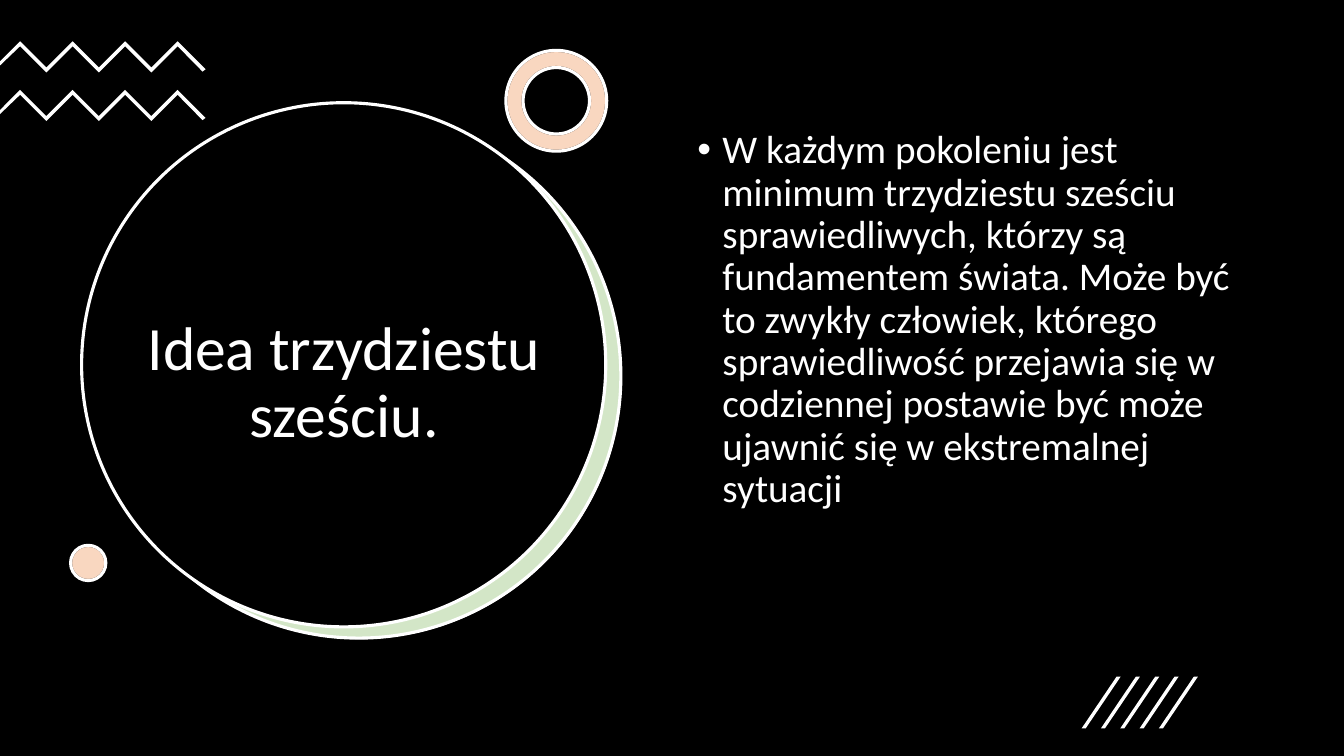
from lxml.etree import SubElement
from pptx import Presentation
from pptx.dml.color import RGBColor
from pptx.enum.shapes import MSO_SHAPE as Preset
from pptx.enum.text import MSO_ANCHOR as Anchor, PP_ALIGN as Align
from pptx.oxml.ns import qn
from pptx.util import Pt

TITLE = "Idea trzydziestu sześciu."
BODY = (
    "W każdym pokoleniu jest minimum trzydziestu sześciu sprawiedliwych, "
    "którzy są fundamentem świata. Może być to zwykły człowiek, którego "
    "sprawiedliwość przejawia się w codziennej postawie być może ujawnić się "
    "w ekstremalnej sytuacji"
)
FONT = "Calibri"
BLACK, WHITE, GREEN, ORANGE = "000000", "FFFFFF", "70AD47", "ED7D31"
WIDTH, HEIGHT = 960, 540
TINT = 30
OUTLINE = 2.25

DISC_SIZE = 374.4
DISCS = [
    (69.8, 82.1, WHITE, None, None),
    (69.1, 81.4, GREEN, WHITE, TINT),
    (58.3, 73.4, BLACK, WHITE, None),
]
ACCENTS = [
    (Preset.DONUT, 361.4, 36, 72),
    (Preset.OVAL, 50.4, 389.5, 25.2),
]
ACCENT_LAYERS = [(WHITE, BLACK, None), (ORANGE, WHITE, TINT)]
RING_THICKNESS = 0.17

ZIGZAG_TOPS = [29.5, 64.2]
ZIGZAG_LEFT, ZIGZAG_STEP, ZIGZAG_WEIGHT = 14.4, 18.75, 3.5
SLASH_LEFT, SLASH_TOP, SLASH_GAP = 772.6, 483.3, 13.8
SLASH_COUNT, SLASH_WIDTH, SLASH_HEIGHT, SLASH_WEIGHT = 5, 27.9, 37, 2.9


def color(value):
    return RGBColor.from_string(value)


def paint(shape, fill, line=None, opacity=None):
    shape.shadow.inherit = False
    shape.fill.solid()
    shape.fill.fore_color.rgb = color(fill)
    if opacity:
        tone = shape.fill._xPr.find(qn("a:solidFill"))[0]
        SubElement(tone, qn("a:alpha")).set("val", str(opacity * 1000))
    if line:
        shape.line.color.rgb = color(line)
        shape.line.width = Pt(OUTLINE)
    else:
        shape.line.fill.background()


def add_preset(page, preset, left, top, width, height, fill, line=None, opacity=None):
    shape = page.shapes.add_shape(preset, Pt(left), Pt(top), Pt(width), Pt(height))
    if preset == Preset.DONUT:
        shape.adjustments[0] = RING_THICKNESS
    paint(shape, fill, line, opacity)


def add_outlines(page, outlines):
    group = page.shapes.add_group_shape()
    for outline in outlines:
        points = [(Pt(x), Pt(y)) for x, y in outline]
        builder = group.shapes.build_freeform(*points[0])
        builder.add_line_segments(points[1:], close=True)
        paint(builder.convert_to_shape(), WHITE)


def add_text(page, text, left, top, width, height, size, align=Align.LEFT,
             anchor=Anchor.TOP, before=0, bullet=None, indent=18):
    box = page.shapes.add_textbox(Pt(left), Pt(top), Pt(width), Pt(height))
    frame = box.text_frame
    frame.word_wrap = True
    frame.vertical_anchor = anchor
    para = frame.paragraphs[0]
    para.alignment = align
    para.line_spacing = 0.9
    para.space_before = Pt(before)
    if bullet:
        properties = para._p.get_or_add_pPr()
        properties.set("marL", str(Pt(indent)))
        properties.set("indent", str(-Pt(indent)))
        SubElement(properties, qn("a:buFont")).set("typeface", "Arial")
        SubElement(properties, qn("a:buChar")).set("char", bullet)
    span = para.add_run()
    span.text = text
    span.font.name = FONT
    span.font.size = Pt(size)
    span.font.color.rgb = color(WHITE)


def zigzag(top):
    teeth = [(ZIGZAG_LEFT + ZIGZAG_STEP * i, top + ZIGZAG_STEP * (i % 2)) for i in range(7)]
    lower = [(x, y + ZIGZAG_WEIGHT) for x, y in reversed(teeth)]
    tip = [(146.9, top + 20), (144.7, top + 21.6)]
    tail = [(0, top + 17.3), (0, top + 14.4)]
    return teeth + tip + lower + tail


def slash(index):
    left = SLASH_LEFT + SLASH_GAP * index
    right, bottom = left + SLASH_WIDTH, SLASH_TOP + SLASH_HEIGHT
    return [(left + SLASH_WEIGHT, bottom), (left, bottom),
            (right - SLASH_WEIGHT, SLASH_TOP), (right, SLASH_TOP)]


def main():
    deck = Presentation()
    deck.slide_width, deck.slide_height = Pt(WIDTH), Pt(HEIGHT)
    page = deck.slides.add_slide(deck.slide_layouts[6])
    add_preset(page, Preset.RECTANGLE, 0, 0, WIDTH, HEIGHT, BLACK)
    for left, top, *style in DISCS:
        add_preset(page, Preset.OVAL, left, top, DISC_SIZE, DISC_SIZE, *style)
    add_text(page, TITLE, 87.1, 147.6, 317.5, 253.4, size=44,
             align=Align.CENTER, anchor=Anchor.MIDDLE)
    add_outlines(page, [zigzag(top) for top in ZIGZAG_TOPS])
    for preset, left, top, size in ACCENTS:
        for style in ACCENT_LAYERS:
            add_preset(page, preset, left, top, size, size, *style)
    add_text(page, BODY, 491, 89.3, 411.1, 342.7, size=28, before=10, bullet="•")
    add_outlines(page, [slash(index) for index in range(SLASH_COUNT)])
    deck.save("out.pptx")


if __name__ == "__main__":
    main()
